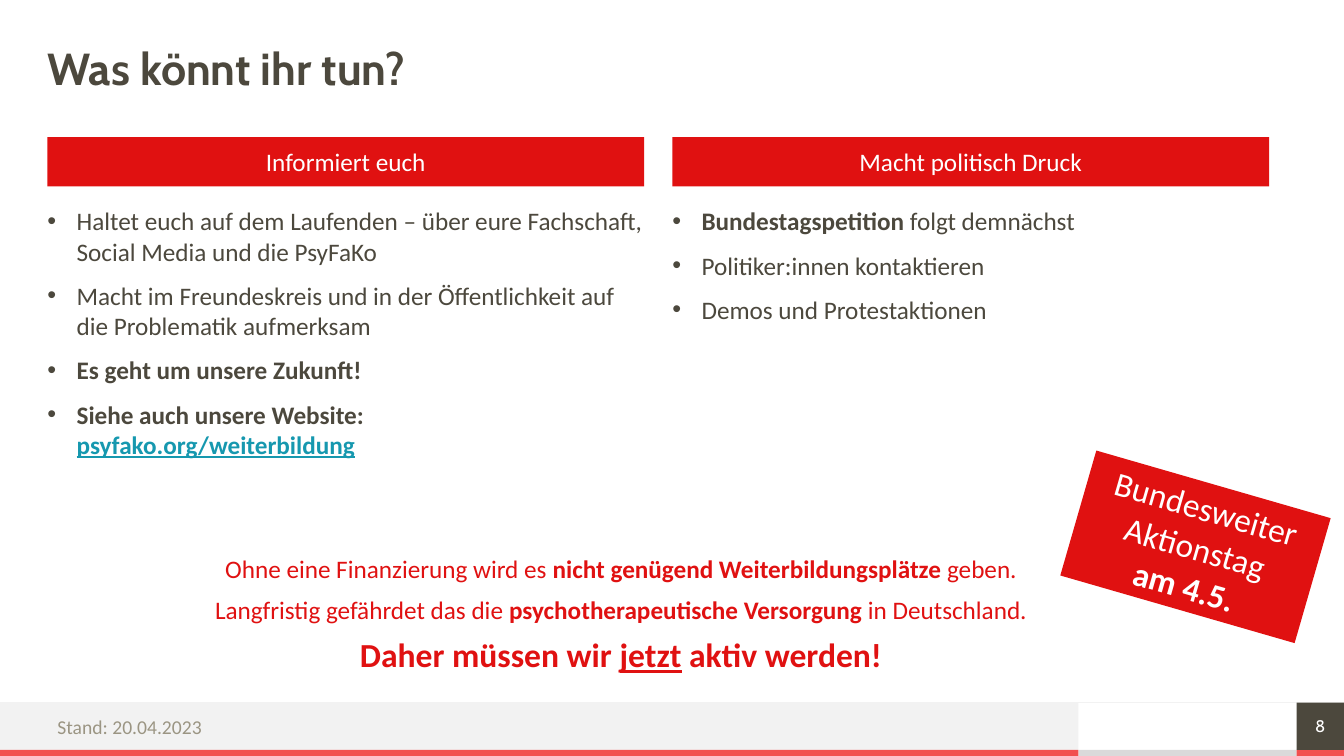
from dataclasses import dataclass

from lxml import etree
from pptx import Presentation
from pptx.dml.color import RGBColor
from pptx.enum import shapes, text
from pptx.oxml import ns
from pptx.util import Pt

RED, DARK, WHITE = "E01111", "4C483D", "FFFFFF"
CORAL, PALE, SILVER = "F24F4F", "F2F2F2", "DADADA"
LINK, MUTED = "1698AF", "9B9583"

SLIDE_W, SLIDE_H = 960, 540
MARGIN = 33.84
COLUMN_W, COLUMN_STEP = 426.24, 446.4
STRIP_H, BAR_H = 4.32, 33.84
STRIP_TOP = SLIDE_H - STRIP_H
BAR_TOP = STRIP_TOP - BAR_H
LOGO_LEFT, NUMBER_LEFT = 770.4, SLIDE_W - BAR_H
CENTER, LEFT = text.PP_ALIGN.CENTER, text.PP_ALIGN.LEFT


@dataclass(frozen=True)
class Span:
    words: str
    bold: bool = False
    underline: bool = False
    color: str | None = None
    size: float | None = None


@dataclass(frozen=True)
class Style:
    size: float
    color: str
    font: str = "Calibri"
    align: text.PP_ALIGN = LEFT
    spacing: float = 1.0
    before: float = 0
    bulleted: bool = False


@dataclass(frozen=True)
class Column:
    heading: str
    points: list[list[Span]]


@dataclass(frozen=True)
class Panel:
    left: float
    top: float
    width: float
    height: float
    color: str


COLUMNS = [
    Column("Informiert euch", [
        [Span("Haltet euch auf dem Laufenden – über eure Fachschaft, "
              "Social Media und die PsyFaKo")],
        [Span("Macht im Freundeskreis und in der Öffentlichkeit auf "
              "die Problematik aufmerksam")],
        [Span("Es geht um unsere Zukunft!", bold=True)],
        [Span("Siehe auch unsere Website: ", bold=True),
         Span("psyfako.org/weiterbildung", bold=True, underline=True, color=LINK)],
    ]),
    Column("Macht politisch Druck", [
        [Span("Bundestagspetition ", bold=True), Span("folgt demnächst")],
        [Span("Politiker:innen kontaktieren")],
        [Span("Demos und Protestaktionen")],
    ]),
]
APPEAL = [
    [Span("Ohne eine Finanzierung wird es "),
     Span("nicht genügend Weiterbildungsplätze ", bold=True),
     Span("geben.")],
    [Span("Langfristig gefährdet das die "),
     Span("psychotherapeutische Versorgung ", bold=True),
     Span("in Deutschland.")],
    [Span("Daher müssen wir ", bold=True, size=24),
     Span("jetzt", bold=True, underline=True, size=24),
     Span(" aktiv werden!", bold=True, size=24)],
]
FOOTER = [
    Panel(LOGO_LEFT, STRIP_TOP, NUMBER_LEFT - LOGO_LEFT, STRIP_H, SILVER),
    Panel(0, BAR_TOP, LOGO_LEFT, BAR_H, PALE),
    Panel(0, STRIP_TOP, LOGO_LEFT, STRIP_H, CORAL),
    Panel(NUMBER_LEFT, STRIP_TOP, BAR_H, STRIP_H, CORAL),
]

HEADING = Style(18, WHITE, align=CENTER)
POINT = Style(18, DARK, before=10, bulleted=True)


def rgb(color: str) -> RGBColor:
    return RGBColor.from_string(color)


def place(shape, left: float, top: float, width: float, height: float) -> None:
    shape.left, shape.top = Pt(left), Pt(top)
    shape.width, shape.height = Pt(width), Pt(height)


def add_bullet(paragraph) -> None:
    props = paragraph._p.get_or_add_pPr()
    props.set("marL", str(Pt(20.88)))
    props.set("indent", str(Pt(-20.88)))
    etree.SubElement(props, ns.qn("a:buFont")).set("typeface", "Arial")
    etree.SubElement(props, ns.qn("a:buChar")).set("char", "•")


def write(shape, paragraphs: list[list[Span]], style: Style, inset: bool = False,
          anchor: text.MSO_ANCHOR = text.MSO_ANCHOR.MIDDLE) -> None:
    frame = shape.text_frame
    frame.word_wrap = True
    frame.auto_size = text.MSO_AUTO_SIZE.NONE
    frame.vertical_anchor = anchor
    frame.margin_left = frame.margin_right = Pt(7.2 if inset else 0)
    frame.margin_top = frame.margin_bottom = Pt(3.6 if inset else 0)
    for number, spans in enumerate(paragraphs):
        paragraph = frame.add_paragraph() if number else frame.paragraphs[0]
        paragraph.alignment = style.align
        paragraph.line_spacing = style.spacing
        paragraph.space_before = Pt(style.before if number else 0)
        paragraph.space_after = Pt(0)
        if style.bulleted:
            add_bullet(paragraph)
        for span in spans:
            run = paragraph.add_run()
            run.text = span.words
            run.font.name = style.font
            run.font.size = Pt(span.size or style.size)
            run.font.bold = span.bold
            run.font.underline = span.underline
            run.font.color.rgb = rgb(span.color or style.color)


def add_panel(slide, panel: Panel):
    shape = slide.shapes.add_shape(shapes.MSO_SHAPE.RECTANGLE, 0, 0, 0, 0)
    place(shape, panel.left, panel.top, panel.width, panel.height)
    shape.shadow.inherit = False
    shape.fill.solid()
    shape.fill.fore_color.rgb = rgb(panel.color)
    shape.line.fill.background()
    return shape


def add_footer(slide) -> None:
    for panel in FOOTER:
        add_panel(slide, panel)
    rule = slide.shapes.add_connector(shapes.MSO_CONNECTOR.STRAIGHT,
                                      Pt(SLIDE_W), Pt(BAR_TOP), 0, Pt(BAR_TOP))
    rule.line.color.rgb = rgb(PALE)
    rule.line.width = Pt(0.5)
    etree.SubElement(rule._element.spPr, ns.qn("a:effectLst"))
    status = slide.shapes.add_textbox(Pt(MARGIN), Pt(506.88), Pt(445.68), Pt(23.04))
    write(status, [[Span("Stand: 20.04.2023")]], Style(14, MUTED), inset=True,
          anchor=text.MSO_ANCHOR.TOP)
    number = add_panel(slide, Panel(NUMBER_LEFT, BAR_TOP, BAR_H, BAR_H, DARK))
    write(number, [[Span("8")]], Style(12, WHITE, font="Cabin", align=CENTER))


def add_columns(slide) -> None:
    for index, column in enumerate(COLUMNS):
        left = MARGIN + index * COLUMN_STEP
        heading = add_panel(slide, Panel(left, 97.92, COLUMN_W, 35.28, RED))
        write(heading, [[Span(column.heading)]], HEADING, inset=True)
        points = slide.placeholders[index + 1]
        place(points, left, 146.88, COLUMN_W, 237.6)
        write(points, column.points, POINT, anchor=text.MSO_ANCHOR.TOP)


def main() -> None:
    deck = Presentation()
    deck.slide_width, deck.slide_height = Pt(SLIDE_W), Pt(SLIDE_H)
    slide = deck.slides.add_slide(deck.slide_layouts.get_by_name("Two Content"))

    title = slide.shapes.title
    place(title, MARGIN, 33.84, 892.08, 33.84)
    write(title, [[Span("Was könnt ihr tun?", bold=True)]],
          Style(32, DARK, font="Cabin", spacing=0.9))

    add_footer(slide)
    add_columns(slide)

    appeal = slide.shapes.add_textbox(Pt(MARGIN), Pt(397.44), Pt(819.36), Pt(90.72))
    write(appeal, APPEAL, Style(18, RED, align=CENTER, spacing=0.9, before=10),
          anchor=text.MSO_ANCHOR.TOP)

    action_day = add_panel(slide, Panel(766.8, 344.16, 174.24, 92.88, RED))
    action_day.rotation = 16.1
    write(action_day, [[Span("Bundesweiter Aktionstag")], [Span("am 4.5.", bold=True)]],
          Style(24, WHITE, align=CENTER), inset=True)

    deck.save("out.pptx")


if __name__ == "__main__":
    main()
